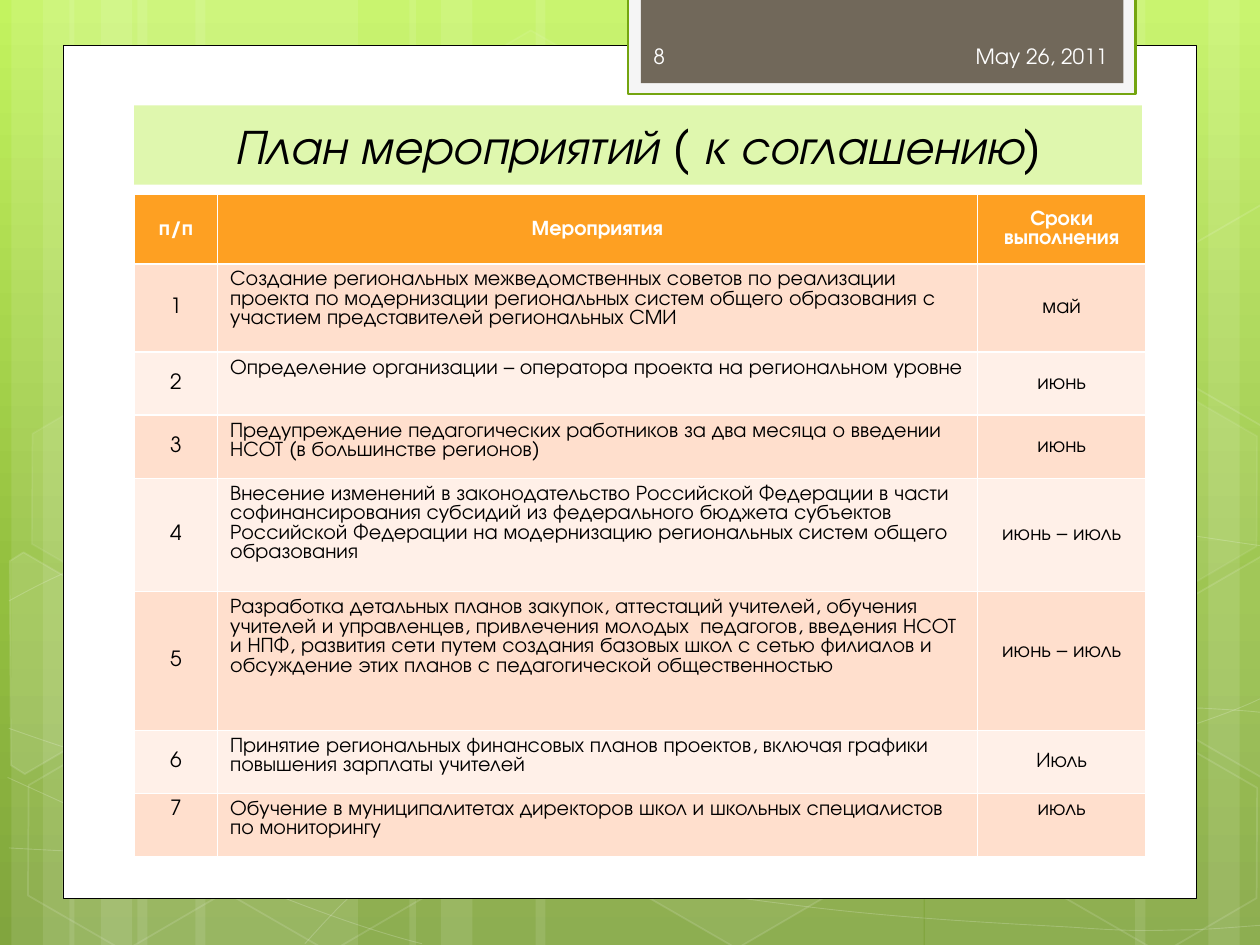
from copy import deepcopy
from dataclasses import dataclass
from math import cos, radians, sin

from lxml import etree
from pptx import Presentation
from pptx.dml.color import RGBColor
from pptx.enum.shapes import MSO_SHAPE
from pptx.enum.text import MSO_ANCHOR, PP_ALIGN
from pptx.oxml.ns import qn
from pptx.util import Inches, Pt

RECTANGLE, HEXAGON = MSO_SHAPE.RECTANGLE, MSO_SHAPE.HEXAGON
LEFT, CENTER, RIGHT = PP_ALIGN.LEFT, PP_ALIGN.CENTER, PP_ALIGN.RIGHT
TOP, MIDDLE = MSO_ANCHOR.TOP, MSO_ANCHOR.MIDDLE
COLUMNS, ROWS = 100, 75


@dataclass(frozen=True)
class Theme:
    font: str = "TeX Gyre Adventor"
    title_size: int = 28
    body_size: int = 12
    white: str = "FFFFFF"
    black: str = "000000"
    backdrop: tuple = ((0, "C3F35F"), (0.62, "93BF3F"), (1, "81A53E"))
    tab_frame: str = "F5F5F5"
    tab_edge: str = "74A510"
    tab: str = "71685A"
    tab_text: str = "FEFEFE"
    title_fill: str = "DFF7AE"
    header: str = "FEA022"
    bands: tuple = ("FFDFCD", "FFF0E8")


THEME = Theme()

STRIPES = ((10.9, 17.5), (0.9, 5), (3.4, 8.3))
WIDE_STRIPES = ((10.9, 30.8), *STRIPES[1:])
MIRROR_EDGE = 101.8

CURVES = (
    ((0.7, 67.3), (6.1, 67.6), (11.5, 67.9), (19, 67.8), (26.5, 67.7), (35.8, 67.5), (45.8, 66.5),
     (55.8, 65.5), (70, 63.6), (79.2, 61.7), (88.3, 59.8), (97.7, 56.8), (100.7, 55.1)),
    ((0.7, 47.7), (3.6, 46.1), (6.5, 44.6), (12.1, 43.1), (17.8, 41.6), (25.9, 39.4), (34.7, 38.7),
     (43.6, 38), (54.4, 37.9), (65.4, 38.7), (76.4, 39.5), (94.7, 42.6), (100.7, 43.4)),
    ((0.6, 61.7), (12.7, 67.2), (24.7, 72.7), (33.5, 74.9)),
    ((0.7, 57.8), (3.8, 58.9), (7, 60), (12.8, 61.6), (18.6, 63.1), (27.3, 65.6), (35.7, 67.3),
     (44, 69), (54.5, 70.8), (62.8, 71.8), (71.1, 72.9), (80, 73.3), (85.3, 73.6),
     (90.6, 74), (91.9, 73.8), (94.5, 73.8), (97.1, 73.7), (98.9, 73.5), (100.7, 73.4)),
    ((24.2, 74.9), (26, 72.9), (27.8, 70.9), (30.2, 69.1), (32.6, 67.2), (36, 65.3), (38.8, 63.9),
     (41.6, 62.5), (43.3, 61.9), (46.9, 60.9), (50.6, 59.9), (57.3, 58.5), (60.8, 57.8),
     (64.4, 57.1), (64.9, 57.1), (68, 56.9), (71.1, 56.6), (76, 56.3), (79.4, 56.2),
     (82.9, 56.1), (88.6, 56.2), (88.6, 56.2), (90.8, 56.2), (93, 56.2), (95.3, 56.2),
     (97.1, 56.3), (98.8, 56.4), (99.7, 56.5), (100.6, 56.6), (100.3, 56.5), (100.6, 56.6)),
)
TILT = 30
HEXAGONS = (
    (33.4, 3.6, 4, 8), (49.7, 58.9, 6, 12), (1.1, 59.1, None, 12),
    (1.4, 31.2, 7, 8), (17.4, 59.2, None, 12), (75.3, 45.3, 10, 12),
    (83.4, 59.3, None, 12), (83.4, 31.4, 7, 8),
)
LEFT_PIVOT, RIGHT_PIVOT = (3.6, 53.6), (98.5, 52)
LEFT_CUT = ((0.8, 44.5), (1.9, 43.8), (9.6, 48.3), (9.5, 57), (2, 61.4), (0.9, 60.7))
RIGHT_CUT = ((92.6, 48.5), (100.2, 44.1), (100.9, 44.6), (100.9, 61.3), (100.2, 61.7), (92.6, 57.3))
UPPER_RISE = 27.9

COLUMN_WIDTHS = (6.6, 60.3, 13.4)
ROW_HEIGHTS = (5.5, 7, 5, 5, 9, 11, 5, 5)
RAISED_ROW = 5
HEADINGS = ("п/п", "Мероприятия", "Сроки выполнения")
ACTIVITIES = (
    ("Создание региональных межведомственных советов по реализации проекта по модернизации "
     "региональных систем общего образования с участием представителей региональных СМИ", "май"),
    ("Определение организации – оператора проекта на региональном уровне", "июнь"),
    ("Предупреждение педагогических работников за два месяца о введении НСОТ "
     "(в большинстве регионов)", "июнь"),
    ("Внесение изменений в законодательство Российской Федерации в части софинансирования "
     "субсидий из федерального бюджета субъектов Российской Федерации на модернизацию "
     "региональных систем общего образования", "июнь – июль"),
    ("Разработка детальных планов закупок, аттестаций учителей, обучения учителей и "
     "управленцев, привлечения молодых  педагогов, введения НСОТ и НПФ, развития сети путем "
     "создания базовых школ с сетью филиалов и обсуждение этих планов с педагогической "
     "общественностью", "июнь – июль"),
    ("Принятие региональных финансовых планов проектов, включая графики повышения зарплаты "
     "учителей", "Июль"),
    ("Обучение в муниципалитетах директоров школ и школьных специалистов по мониторингу", "июль"),
)


def grid(*cells):
    return [Inches(cell / 10) for cell in cells]


def paint(fill, color, opacity=100):
    if color is None:
        fill.background()
        return
    fill.solid()
    fill.fore_color.rgb = RGBColor.from_string(color)
    if opacity < 100:
        for tint in fill._xPr.iter(qn("a:srgbClr")):
            etree.SubElement(tint, qn("a:alpha"), val=str(opacity * 1000))


def dress(shape, fill=None, opacity=100, edge=None, weight=1, edge_opacity=100):
    shape.shadow.inherit = False
    paint(shape.fill, fill, opacity)
    paint(shape.line.fill, edge, edge_opacity)
    if edge:
        shape.line.width = Pt(weight)


def add_panel(slide, place, *look, kind=RECTANGLE, **style):
    panel = slide.shapes.add_shape(kind, *grid(*place))
    dress(panel, *look, **style)
    return panel


def add_outline(slide, points, closed, **style):
    start, *rest = [grid(*point) for point in points]
    builder = slide.shapes.build_freeform(*start)
    builder.add_line_segments(rest, close=closed)
    outline = builder.convert_to_shape()
    dress(outline, **style)
    return outline


def add_curve(slide, knots):
    curve = add_outline(slide, knots, False, edge=THEME.white, weight=0.5, edge_opacity=20)
    segments = list(curve._element.iter(qn("a:lnTo")))
    for first in range(0, len(segments), 3):
        bend = etree.Element(qn("a:cubicBezTo"))
        segments[first].addprevious(bend)
        for segment in segments[first:first + 3]:
            bend.append(segment[0])
            segment.getparent().remove(segment)


def turn_back(points, pivot):
    c, s = cos(radians(TILT)), sin(radians(TILT))
    px, py = pivot
    return [(px + (x - px) * c + (y - py) * s, py + (y - py) * c - (x - px) * s)
            for x, y in points]


def write(frame, text, color, align=LEFT, size=THEME.body_size, bold=False, italic=False):
    frame.text = text
    paragraph = frame.paragraphs[0]
    paragraph.alignment = align
    font = paragraph.font
    font.name, font.size, font.bold, font.italic = THEME.font, Pt(size), bold, italic
    font.color.rgb = RGBColor.from_string(color)


def add_label(slide, place, text, color, fill=None, **style):
    label = slide.shapes.add_textbox(*grid(*place))
    paint(label.fill, fill)
    label.text_frame.word_wrap = True
    label.text_frame.vertical_anchor = MIDDLE
    write(label.text_frame, text, color, **style)


def paint_backdrop(slide):
    fill = slide.background.fill
    fill.gradient()
    fill.gradient_angle = 270
    stops = fill._xPr.find(".//" + qn("a:gsLst"))
    stops.append(deepcopy(stops[0]))
    for stop, (position, color) in zip(fill.gradient_stops, THEME.backdrop):
        stop.position = position
        stop.color.rgb = RGBColor.from_string(color)


def add_decoration(slide):
    mirrored = [(MIRROR_EDGE - x - width, width) for x, width in STRIPES]
    shifted = [(x + 4.6, width) for x, width in STRIPES]
    central = [(x + 31.6, width) for x, width in WIDE_STRIPES]
    for x, width in (*STRIPES, *shifted, *mirrored, *central):
        add_panel(slide, (x, 0, width, ROWS), THEME.white, 10)
    for knots in CURVES:
        add_curve(slide, knots)
    for x, y, opacity, edge_opacity in HEXAGONS:
        cell = add_panel(slide, (x, y, 17.5, 15.2), THEME.white if opacity else None,
                         opacity or 100, THEME.white, 1, edge_opacity, kind=HEXAGON)
        cell.adjustments[0] = 0.285
        cell.rotation = TILT
    right_cut = turn_back(RIGHT_CUT, RIGHT_PIVOT)
    upper_cut = [(x, y - UPPER_RISE) for x, y in right_cut]
    for points, fill, opacity in ((turn_back(LEFT_CUT, LEFT_PIVOT), THEME.white, 10),
                                  (right_cut, THEME.white, 4), (upper_cut, None, 100)):
        cut = add_outline(slide, points, True, fill=fill, opacity=opacity,
                          edge=THEME.white, edge_opacity=12)
        cut.rotation = TILT


def add_plan(slide):
    entries = [HEADINGS] + [(str(number), *activity)
                            for number, activity in enumerate(ACTIVITIES, 1)]
    place = grid(10.67, 15.45, sum(COLUMN_WIDTHS), sum(ROW_HEIGHTS))
    plan = slide.shapes.add_table(len(entries), len(HEADINGS), *place).table
    for column, width in zip(plan.columns, grid(*COLUMN_WIDTHS)):
        column.width = width
    for row, height in zip(plan.rows, grid(*ROW_HEIGHTS)):
        row.height = height
    for r, entry in enumerate(entries):
        heading, last = r == 0, r == len(entries) - 1
        for c, text in enumerate(entry):
            cell = plan.cell(r, c)
            description = c == 1 and not heading
            paint(cell.fill, THEME.header if heading else THEME.bands[(r - 1) % 2])
            cell.vertical_anchor = TOP if description or last else MIDDLE
            write(cell.text_frame, text, THEME.white if heading else THEME.black,
                  LEFT if description else CENTER, bold=heading)
    plan.cell(RAISED_ROW, 2).margin_bottom = Inches(0.2)


def main():
    deck = Presentation()
    deck.slide_width, deck.slide_height = grid(COLUMNS, ROWS)
    slide = deck.slides.add_slide(deck.slide_layouts[6])
    paint_backdrop(slide)
    add_decoration(slide)
    add_panel(slide, (5, 3.6, 90, 67.7), THEME.white, edge=THEME.black, weight=0.5)
    add_panel(slide, (49.87, -0.2, 40.25, 7.65), THEME.tab_frame, edge=THEME.tab_edge, weight=1.25)
    add_panel(slide, (50.87, -0.2, 38.3, 6.8), THEME.tab)
    add_label(slide, (10.64, 8.36, 80, 6.3), "План мероприятий ( к соглашению)", THEME.black,
              THEME.title_fill, align=CENTER, size=THEME.title_size, italic=True)
    add_plan(slide)
    add_label(slide, (65.6, 2.45, 23.3, 4), "May 26, 2011", THEME.tab_text, align=RIGHT)
    add_label(slide, (50.87, 2.45, 14.6, 4), "8", THEME.tab_text)
    deck.save("out.pptx")


if __name__ == "__main__":
    main()
